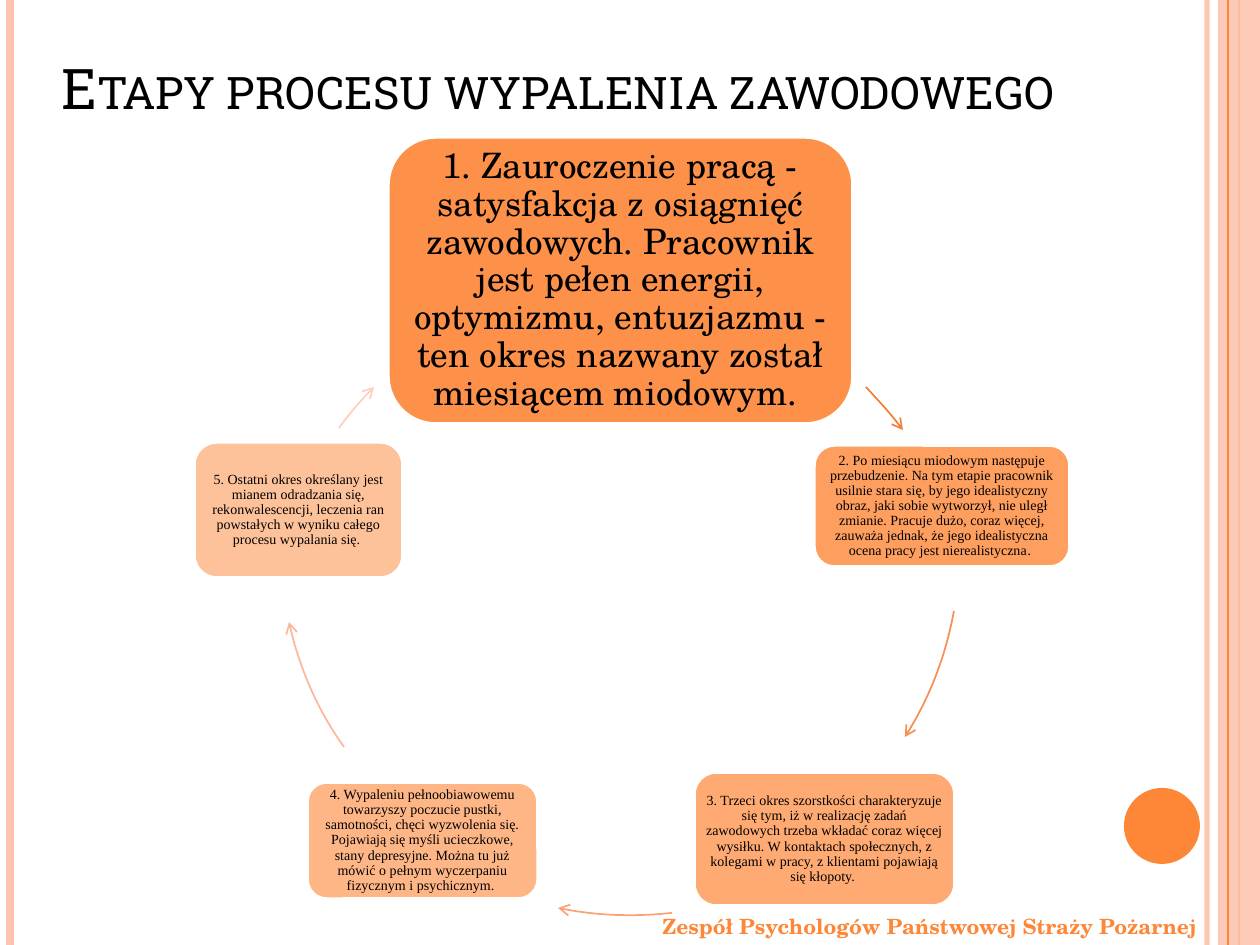
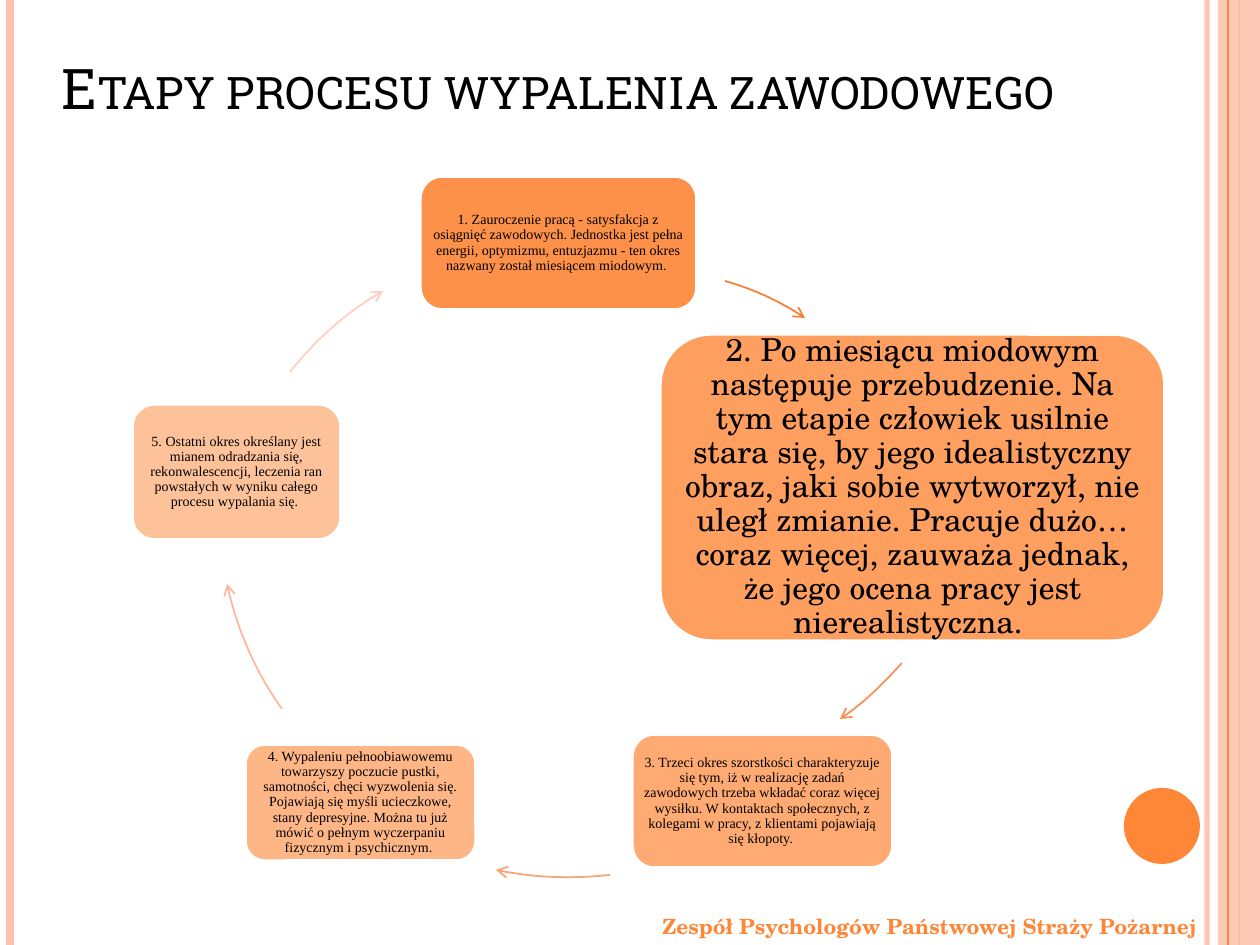
"""Build two slides on the stages of professional burnout as a five-step cycle."""
from lxml import etree
from pptx import Presentation
from pptx import util as u
from pptx.dml.color import RGBColor
from pptx.enum import shapes, text
from pptx.oxml.ns import qn

PX = 914400 / 126
COLORS = {
    "orange": "FE8637", "pink": "FEC3AE", "white": "FFFFFF", "black": "000000",
    "arc1": "F38035", "arc2": "F79056", "arc3": "FAA278", "arc4": "FDB79B", "arc5": "FFCFBF",
}
RGB = {name: RGBColor.from_string(value) for name, value in COLORS.items()}
SLAB, SCHOLA, TIMES = "Roboto Slab", "TeX Gyre Schola", "Times New Roman"


def px(*lengths):
    return [u.Emu(round(length * PX)) for length in lengths]


def fade(shape, percent):
    color = next(shape._element.spPr.iter(qn("a:srgbClr")))
    etree.SubElement(color, qn("a:alpha"), val=str(percent * 1000))


RULES = [(1207, "pink", 3), (10, "pink", 4.5), (1239, "orange", 1.5), (1228, "orange", 0.75)]
LABELS = [
    ((49, 39, 1109, 88), "Etapy procesu wypalenia zawodowego", SLAB, 32, "black", False),
    ((650, 895, 566, 50), "Zespół Psychologów Państwowej Straży Pożarnej", SCHOLA, 12, "orange", True),
]

LATE_STAGES = [
    ((694, 772, 261, 134), 8, 4, [(
        "3. Trzeci okres szorstkości charakteryzuje się tym, iż w realizację zadań zawodowych "
        "trzeba wkładać coraz więcej wysiłku. W kontaktach społecznych, z kolegami w pracy, "
        "z klientami pojawiają się kłopoty. ", TIMES)]),
    ((307, 782, 231, 117), 8, 4, [(
        "4. Wypaleniu pełnoobiawowemu towarzyszy poczucie pustki, samotności, chęci wyzwolenia się. "
        "Pojawiają się myśli ucieczkowe, stany depresyjne. Można tu już mówić o pełnym wyczerpaniu "
        "fizycznym i psychicznym. ", TIMES)]),
    ((194, 442, 209, 136), 8, 4, [(
        "5. Ostatni okres określany jest mianem odradzania się, rekonwalescencji, leczenia ran "
        "powstałych w wyniku całego procesu wypalania się. ", TIMES)]),
]
LATE_ARCS = [
    [(672, 913), (634, 917), (596, 916), (558, 908)],
    [(344, 747), (318, 711), (299, 668), (289, 622)],
]

CYCLES = [
    {
        "late_shift": (0, 0),
        "early_stages": [
            ((388, 137, 465, 287), 20, 10, [(
                "1. Zauroczenie pracą - satysfakcja z osiągnięć zawodowych. Pracownik jest pełen "
                "energii, optymizmu, entuzjazmu - ten okres nazwany został miesiącem miodowym. ",
                SCHOLA)]),
            ((814, 445, 256, 122), 8, 4, [(
                "2. Po miesiącu miodowym następuje przebudzenie. Na tym etapie pracownik usilnie "
                "stara się, by jego idealistyczny obraz, jaki sobie wytworzył, nie uległ zmianie. "
                "Pracuje dużo, coraz więcej, zauważa jednak, że jego idealistyczna ocena pracy "
                "jest nierealistyczna", TIMES), (". ", SCHOLA)]),
        ],
        "early_arcs": [
            [(866, 387), (879, 401), (892, 415), (903, 430)],
            [(954, 611), (946, 655), (930, 698), (905, 737)],
        ],
        "closing_arc": [(339, 428), (350, 413), (362, 399), (374, 387)],
    },
    {
        "late_shift": (-62, -38),
        "early_stages": [
            ((420, 176, 277, 134), 8, 4, [(
                "1. Zauroczenie pracą - satysfakcja z osiągnięć zawodowych. Jednostka jest pełna "
                "energii, optymizmu, entuzjazmu - ten okres nazwany został miesiącem miodowym. ",
                TIMES)]),
            ((660, 334, 505, 307), 18, 9, [(
                "2. Po miesiącu miodowym następuje przebudzenie. Na tym etapie człowiek usilnie "
                "stara się, by jego idealistyczny obraz, jaki sobie wytworzył, nie uległ zmianie. "
                "Pracuje dużo… coraz więcej, zauważa jednak, że jego ocena pracy jest "
                "nierealistyczna. ", SCHOLA)]),
        ],
        "early_arcs": [
            [(725, 281), (753, 289), (780, 301), (805, 318)],
            [(902, 663), (883, 684), (863, 704), (840, 719)],
        ],
        "closing_arc": [(290, 372), (316, 339), (348, 311), (383, 291)],
    },
]

deck = Presentation()
deck.slide_width, deck.slide_height = px(1260, 945)

for cycle in CYCLES:
    slide = deck.slides.add_slide(deck.slide_layouts[6])

    for x, color, weight in RULES:
        if color == "orange" and weight == 0.75:
            band = slide.shapes.add_shape(shapes.MSO_SHAPE.RECTANGLE, *px(1218, 0, 42, 945))
            band.shadow.inherit = False
            band.fill.solid()
            band.fill.fore_color.rgb = RGB["pink"]
            band.line.fill.background()
            fade(band, 87)
        rule = slide.shapes.add_connector(shapes.MSO_CONNECTOR.STRAIGHT, *px(x, 0, x, 945))
        rule.line.color.rgb = RGB[color]
        rule.line.width = u.Pt(weight)
        etree.SubElement(rule._element.spPr, qn("a:effectLst"))
        if weight == 3:
            fade(rule, 93)

    disc = slide.shapes.add_shape(shapes.MSO_SHAPE.OVAL, *px(1124, 788, 76, 76))
    disc.shadow.inherit = False
    disc.fill.solid()
    disc.fill.fore_color.rgb = RGB["orange"]
    disc.line.fill.background()

    dx, dy = cycle["late_shift"]
    stages = cycle["early_stages"] + [
        ((x + dx, y + dy, w, h), size, inset, runs)
        for (x, y, w, h), size, inset, runs in LATE_STAGES
    ]
    arcs = cycle["early_arcs"] + [
        [(x + dx, y + dy) for x, y in points] for points in LATE_ARCS
    ] + [cycle["closing_arc"]]

    for number, ((area, size, inset, runs), points) in enumerate(zip(stages, arcs), start=1):
        stage = slide.shapes.add_shape(shapes.MSO_SHAPE.ROUNDED_RECTANGLE, *px(*area))
        stage.shadow.inherit = False
        stage.fill.solid()
        stage.fill.fore_color.rgb = RGB["orange"]
        stage.line.color.rgb = RGB["white"]
        stage.line.width = u.Pt(2)
        fade(stage, 100 - 10 * number)
        frame = stage.text_frame
        frame.word_wrap = True
        frame.vertical_anchor = text.MSO_ANCHOR.MIDDLE
        frame.margin_left, frame.margin_top, frame.margin_right, frame.margin_bottom = px(*[inset] * 4)
        paragraph = frame.paragraphs[0]
        paragraph.alignment = text.PP_ALIGN.CENTER
        paragraph.line_spacing = 0.9
        for words, font in runs:
            run = paragraph.add_run()
            run.text = words
            run.font.name = font
            run.font.size = u.Pt(size)
            run.font.color.rgb = RGB["black"]

        curve = []
        for step in range(13):
            t = step / 12
            weights = ((1 - t) ** 3, 3 * t * (1 - t) ** 2, 3 * t * t * (1 - t), t ** 3)
            curve.append(px(*(sum(w * v for w, v in zip(weights, axis)) for axis in zip(*points))))
        outline = slide.shapes.build_freeform(*curve[0])
        outline.add_line_segments(curve[1:], close=False)
        arc = outline.convert_to_shape()
        arc.shadow.inherit = False
        arc.fill.background()
        arc.line.color.rgb = RGB[f"arc{number}"]
        arc.line.width = u.Pt(1)
        etree.SubElement(arc._element.spPr.find(qn("a:ln")), qn("a:tailEnd"), type="arrow")

    for area, words, font, size, color, bold in LABELS:
        label = slide.shapes.add_textbox(*px(*area))
        label.text_frame.word_wrap = True
        label.text_frame.vertical_anchor = text.MSO_ANCHOR.BOTTOM
        run = label.text_frame.paragraphs[0].add_run()
        run.text = words
        run.font.name = font
        run.font.size = u.Pt(size)
        run.font.bold = bold
        run.font.color.rgb = RGB[color]
        if font == SLAB:
            run._r.get_or_add_rPr().set("cap", "small")

deck.save("out.pptx")
